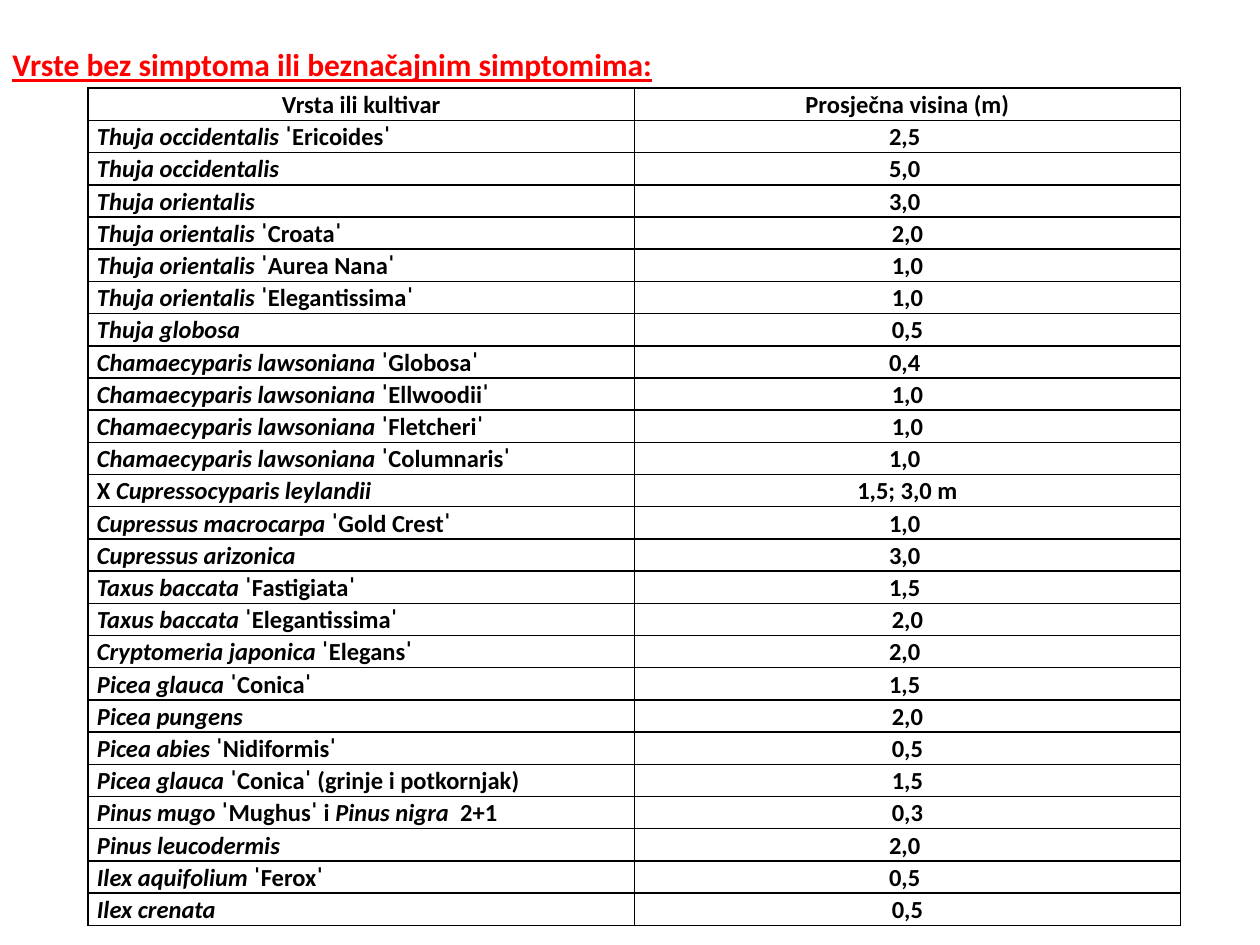
from lxml import etree
from pptx import Presentation
from pptx.dml.color import RGBColor
from pptx.enum.text import MSO_ANCHOR, PP_ALIGN
from pptx.oxml.ns import qn
from pptx.util import Inches, Pt

LEFT, CENTER = PP_ALIGN.LEFT, PP_ALIGN.CENTER
TOP, MIDDLE = MSO_ANCHOR.TOP, MSO_ANCHOR.MIDDLE
BORDER_SIDES = ("a:lnL", "a:lnR", "a:lnT", "a:lnB")

TITLE = "Vrste bez simptoma ili beznačajnim simptomima:"
HEADERS = ("Vrsta ili kultivar", "Prosječna visina (m)")
SPECIES = [
    (("Thuja occidentalis ", "ˈEricoidesˈ"), "2,5 "),
    (("Thuja occidentalis",), "5,0 "),
    (("Thuja orientalis",), "3,0 "),
    (("Thuja orientalis ", "ˈCroataˈ"), "2,0"),
    (("Thuja orientalis ", "ˈAurea Nanaˈ"), "1,0"),
    (("Thuja orientalis ", "ˈElegantissimaˈ"), "1,0"),
    (("Thuja globosa",), "0,5"),
    (("Chamaecyparis lawsoniana ", "ˈGlobosaˈ"), "0,4 "),
    (("Chamaecyparis lawsoniana", " ˈEllwoodiiˈ"), "1,0"),
    (("Chamaecyparis lawsoniana ", "ˈFletcheriˈ"), "1,0"),
    (("Chamaecyparis lawsoniana ", "ˈColumnarisˈ"), "1,0 "),
    (("", "X ", "Cupressocyparis leylandii"), "1,5; 3,0 m"),
    (("Cupressus macrocarpa ", "ˈGold Crestˈ"), "1,0 "),
    (("Cupressus arizonica",), "3,0 "),
    (("Taxus baccata ", "ˈFastigiataˈ"), "1,5 "),
    (("Taxus baccata ", "ˈElegantissimaˈ"), "2,0"),
    (("Cryptomeria japonica ", "ˈElegansˈ"), "2,0 "),
    (("Picea glauca ", "ˈConicaˈ"), "1,5 "),
    (("Picea pungens",), "2,0"),
    (("Picea abies ", "ˈNidiformisˈ"), "0,5"),
    (("Picea glauca ", "ˈConicaˈ (grinje i potkornjak)"), "1,5"),
    (("Pinus mugo ", "ˈMughusˈ i ", "Pinus nigra ", " 2+1"), "0,3"),
    (("Pinus leucodermis",), "2,0 "),
    (("Ilex aquifolium ", "ˈFeroxˈ"), "0,5 "),
    (("Ilex crenata",), "0,5"),
]


def color(value):
    return RGBColor.from_string(value)


def plain(text):
    return [(text, False)]


def alternating(parts):
    return [(text, index % 2 == 0) for index, text in enumerate(parts) if text]


class SlideBuilder:
    font_name = "Calibri"
    title_color = "FF0000"
    text_color = "000000"
    border_color = "000000"

    def __init__(self, slide):
        self.slide = slide

    def add_run(self, paragraph, text, size, hex_color, italic=False):
        run = paragraph.add_run()
        run.text = text
        font = run.font
        font.name = self.font_name
        font.size = Pt(size)
        font.bold = True
        font.italic = italic
        font.color.rgb = color(hex_color)
        return run

    def title(self, text, left, top, width, height):
        shape = self.slide.shapes.add_textbox(
            Inches(left), Inches(top), Inches(width), Inches(height)
        )
        frame = shape.text_frame
        frame.word_wrap = False
        frame.vertical_anchor = MIDDLE
        run = self.add_run(frame.paragraphs[0], text, 18, self.title_color)
        run.font.underline = True

    def borders(self, cell):
        properties = cell._tc.get_or_add_tcPr()
        for side in BORDER_SIDES:
            line = etree.SubElement(properties, qn(side), w=str(Pt(1)))
            fill = etree.SubElement(line, qn("a:solidFill"))
            etree.SubElement(fill, qn("a:srgbClr"), val=self.border_color)

    def cell(self, cell, runs, alignment):
        cell.margin_left = cell.margin_right = Inches(0.07)
        cell.margin_top = cell.margin_bottom = 0
        cell.vertical_anchor = TOP
        self.borders(cell)
        cell.fill.background()
        paragraph = cell.text_frame.paragraphs[0]
        paragraph.alignment = alignment
        paragraph.line_spacing = 1.07
        for text, italic in runs:
            self.add_run(paragraph, text, 14, self.text_color, italic)

    def table(self, headers, records, left, top, width, height):
        row_count = len(records) + 1
        table = self.slide.shapes.add_table(
            row_count, len(headers),
            Inches(left), Inches(top), Inches(width), Inches(height),
        ).table
        table.first_row = False
        table.horz_banding = False
        for row in table.rows:
            row.height = int(Inches(height) / row_count)
        for column, header in enumerate(headers):
            self.cell(table.cell(0, column), plain(header), CENTER)
        for row, (name_parts, average_height) in enumerate(records, 1):
            self.cell(table.cell(row, 0), alternating(name_parts), LEFT)
            self.cell(table.cell(row, 1), plain(average_height), CENTER)


def main():
    presentation = Presentation()
    presentation.slide_width = Inches(10)
    presentation.slide_height = Inches(7.5)
    slide = presentation.slides.add_slide(presentation.slide_layouts[6])
    builder = SlideBuilder(slide)
    builder.title(TITLE, 0, 0.31, 5.32, 0.4)
    builder.table(HEADERS, SPECIES, 0.7, 0.7, 8.67, 6.65)
    presentation.save("out.pptx")


if __name__ == "__main__":
    main()
